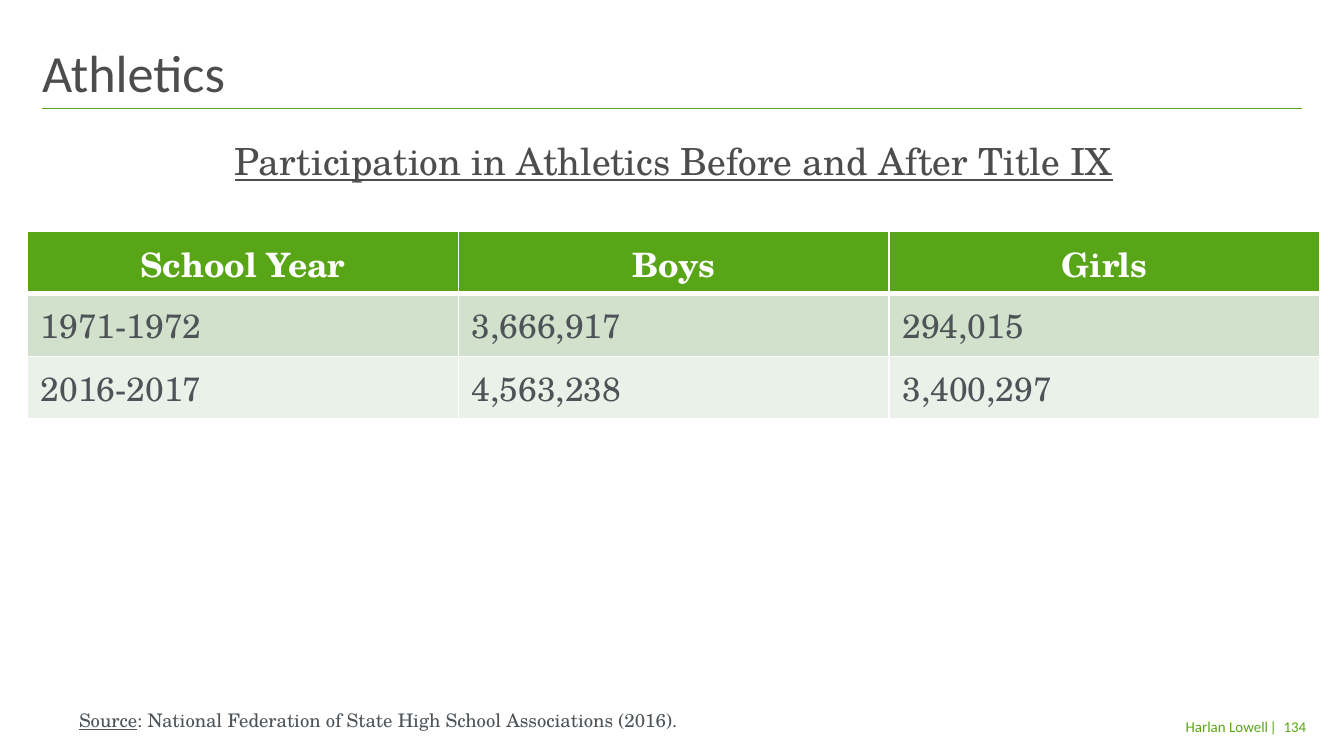
"""Build the Athletics slide comparing school sports participation before and after Title IX."""
from lxml.etree import SubElement
from pptx import Presentation
from pptx.dml.color import RGBColor
from pptx.enum.shapes import MSO_CONNECTOR
from pptx.enum.text import MSO_ANCHOR, PP_ALIGN
from pptx.oxml.ns import qn
from pptx.util import Pt

HEADING = "Athletics"
SUBHEADING = "Participation in Athletics Before and After Title IX"
PARTICIPATION = [
    ("School Year", "Boys", "Girls"),
    ("1971-1972", "3,666,917", "294,015"),
    ("2016-2017", "4,563,238", "3,400,297"),
]
SOURCE = [("Source", True), (": National Federation of State High School Associations (2016).", False)]
FIRM = "Harlan Lowell"
PAGE_NUMBER = "|  134"

THEME = {
    "green": "58A618", "gray": "4D4D4D", "slate": "4D5357", "white": "FFFFFF",
    "row_fills": ["58A618", "D1E1CC", "EAF1E8"],
    "sans": "Calibri", "serif": "TeX Gyre Schola",
    "heading": 28, "subheading": 20, "table": 18, "source": 10, "footer": 8,
}
SLIDE_SIZE = (720, 405)
MARGIN = 22.5
RULE_Y = 58
HEADING_HEIGHT = 35.5
TABLE_LEFT, TABLE_TOP = 14.75, 124
COLUMN_WIDTH, ROW_HEIGHT = 230.8, 33.5


def write(frame, text, *, size, color, font, bold=False, underline=False, align=PP_ALIGN.LEFT):
    """Fill a text frame with a string or with (string, underlined) runs."""
    paragraph = frame.paragraphs[0]
    paragraph.alignment = align
    for words, underlined in [(text, underline)] if isinstance(text, str) else text:
        run = paragraph.add_run()
        run.text = words
        run.font.name, run.font.size = font, Pt(size)
        run.font.bold, run.font.underline = bold, underlined
        run.font.color.rgb = RGBColor.from_string(color)
    return paragraph


def lay_out(shape, box, anchor=MSO_ANCHOR.TOP, insets=(7.2, 3.6, 7.2, 3.6), wrap=True):
    """Place a shape and return its text frame, set up for writing."""
    shape.left, shape.top, shape.width, shape.height = map(Pt, box)
    frame = shape.text_frame
    frame.word_wrap, frame.vertical_anchor = wrap, anchor
    frame.margin_left, frame.margin_top, frame.margin_right, frame.margin_bottom = map(Pt, insets)
    return frame


def add_box(slide, box, **layout):
    """Add a text box and return its text frame."""
    return lay_out(slide.shapes.add_textbox(*map(Pt, box)), box, **layout)


def add_rule(slide):
    """Draw the green line under the heading."""
    rule = slide.shapes.add_connector(
        MSO_CONNECTOR.STRAIGHT, Pt(SLIDE_SIZE[0] - MARGIN), Pt(RULE_Y), Pt(MARGIN), Pt(RULE_Y))
    rule.line.color.rgb = RGBColor.from_string(THEME["green"])
    rule.line.width = Pt(0.5)
    SubElement(rule._element.spPr, qn("a:effectLst"))


def set_borders(cell, **widths):
    """Give a cell white borders of the given widths."""
    properties = cell._tc.get_or_add_tcPr()
    for side, width in widths.items():
        border = SubElement(properties, qn(f"a:ln{side}"), w=str(Pt(width)))
        fill = SubElement(border, qn("a:solidFill"))
        SubElement(fill, qn("a:srgbClr"), val=THEME["white"])


def add_participation(slide):
    """Add the participation table."""
    rows, columns = len(PARTICIPATION), len(PARTICIPATION[0])
    table = slide.shapes.add_table(
        rows, columns, Pt(TABLE_LEFT), Pt(TABLE_TOP),
        Pt(columns * COLUMN_WIDTH), Pt(rows * ROW_HEIGHT)).table
    for r, values in enumerate(PARTICIPATION):
        header = r == 0
        for c, value in enumerate(values):
            cell = table.cell(r, c)
            set_borders(cell, L=1, R=1, T=3 if r == 1 else 1, B=3 if header else 1)
            cell.fill.solid()
            cell.fill.fore_color.rgb = RGBColor.from_string(THEME["row_fills"][r])
            write(cell.text_frame, value, size=THEME["table"], font=THEME["serif"], bold=header,
                  color=THEME["white"] if header else THEME["slate"],
                  align=PP_ALIGN.CENTER if header else PP_ALIGN.LEFT)


def main():
    """Assemble and save the slide."""
    deck = Presentation()
    deck.slide_width, deck.slide_height = map(Pt, SLIDE_SIZE)
    slide = deck.slides.add_slide(deck.slide_layouts[5])

    heading = lay_out(slide.shapes.title, (MARGIN, RULE_Y - HEADING_HEIGHT, 675, HEADING_HEIGHT),
                      anchor=MSO_ANCHOR.BOTTOM, insets=(0, 3, 0, 3))
    write(heading, HEADING, size=THEME["heading"], color=THEME["gray"], font=THEME["sans"])
    add_rule(slide)

    subheading = add_box(slide, (MARGIN, 71.25, 677, 309), insets=(0, 3, 0, 3))
    write(subheading, SUBHEADING, size=THEME["subheading"], color=THEME["gray"], font=THEME["serif"],
          underline=True, align=PP_ALIGN.CENTER).space_after = Pt(9)
    add_participation(slide)
    source = add_box(slide, (35.25, 376.25, 527, 19.5))
    write(source, SOURCE, size=THEME["source"], color=THEME["slate"], font=THEME["serif"])

    footer = {"size": THEME["footer"], "color": THEME["green"], "font": THEME["sans"],
              "align": PP_ALIGN.RIGHT}
    firm = add_box(slide, (451.5, 381, 228, 17), anchor=MSO_ANCHOR.MIDDLE, insets=(0, 3.6, 0, 3.6))
    write(firm, FIRM, **footer)
    page = add_box(slide, (677, 381, 30, 17), anchor=MSO_ANCHOR.MIDDLE,
                   insets=(0, 3.6, 7.2, 3.6), wrap=False)
    write(page, PAGE_NUMBER, **footer)

    deck.save("out.pptx")


if __name__ == "__main__":
    main()
